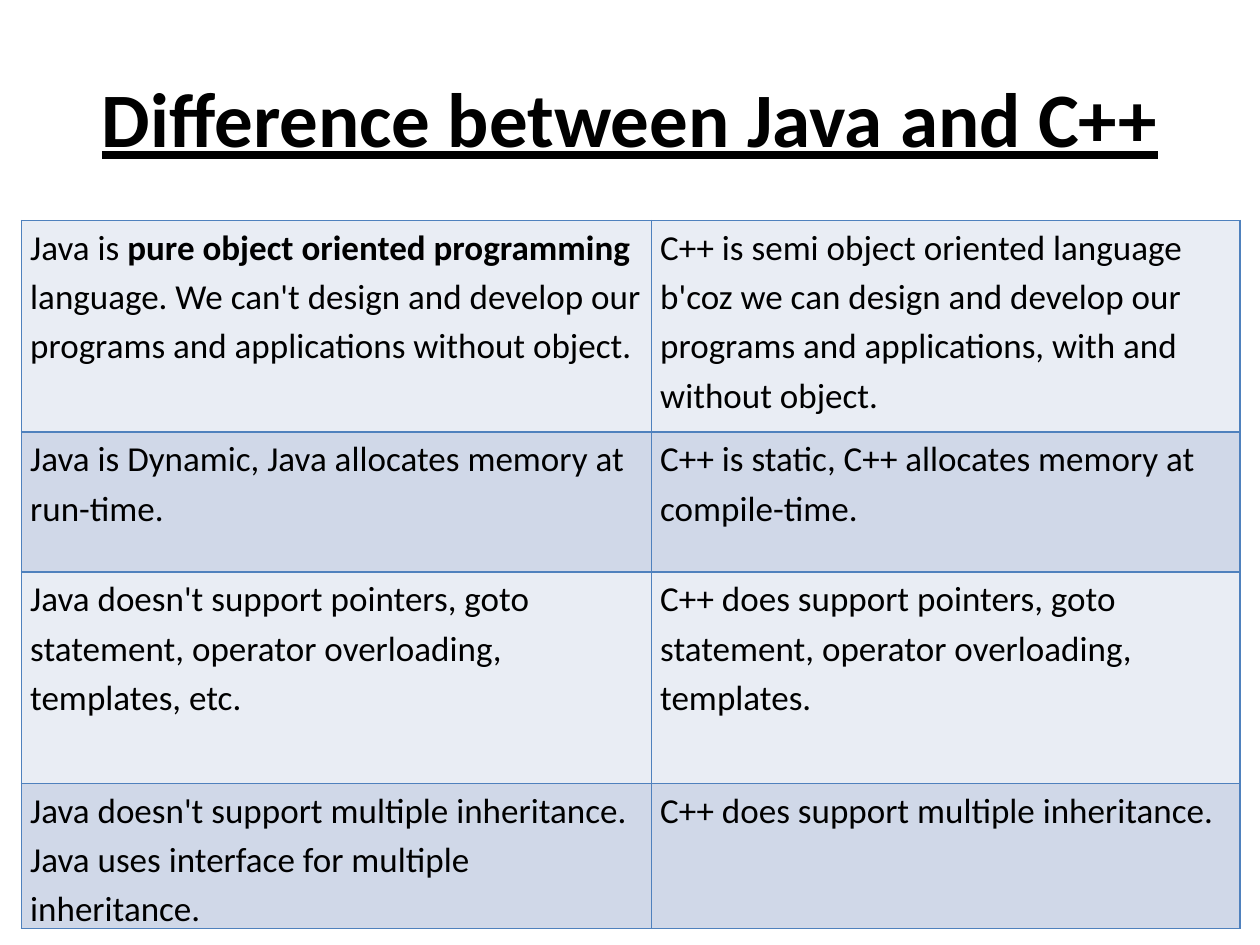
from pptx import Presentation
from pptx.dml.color import RGBColor
from pptx.enum.text import MSO_ANCHOR as Anchor, PP_ALIGN as Align
from pptx.oxml import parse_xml
from pptx.oxml.ns import nsdecls
from pptx.util import Inches, Pt

FONT = "Calibri"
BLACK = "000000"
BORDER = "4F81BD"
BANDS = ("E9EDF4", "D0D8E8")
COLUMN_WIDTHS = (5, 4.67)
ROW_HEIGHTS = (1.68, 1.11, 1.68, 1.11)
COMPARISON = [
    (
        [
            ("Java is ", False),
            ("pure object oriented programming ", True),
            ("language. We can't design and develop our programs and applications without object.", False),
        ],
        [("C++ is semi object oriented language b'coz we can design and develop our "
          "programs and applications, with and without object.", False)],
    ),
    (
        [("Java is Dynamic, Java allocates memory at run-time.", False)],
        [("C++ is static, C++ allocates memory at compile-time.", False)],
    ),
    (
        [("Java doesn't support pointers, goto statement, operator overloading, templates, etc.", False)],
        [("C++ does support pointers, goto statement, operator overloading, templates.", False)],
    ),
    (
        [("Java doesn't support multiple inheritance. Java uses interface for multiple inheritance.", False)],
        [("C++ does support multiple inheritance.", False)],
    ),
]


def color(value):
    """Turn a hex string into a colour."""
    return RGBColor.from_string(value)


def add_span(para, text, size=20, bold=False, underline=False):
    """Append formatted text to a paragraph."""
    span = para.add_run()
    span.text = text
    span.font.name = FONT
    span.font.size = Pt(size)
    span.font.bold = bold
    span.font.underline = underline
    span.font.color.rgb = color(BLACK)


def add_title(page, text, left, top, width, height):
    """Place the centred, underlined heading."""
    box = page.shapes.add_textbox(Inches(left), Inches(top), Inches(width), Inches(height))
    frame = box.text_frame
    frame.word_wrap = True
    frame.vertical_anchor = Anchor.MIDDLE
    para = frame.paragraphs[0]
    para.alignment = Align.CENTER
    add_span(para, text, size=44, bold=True, underline=True)


def add_borders(cell):
    """Draw a thin line on all four sides of a cell."""
    properties = cell._tc.get_or_add_tcPr()
    for index, side in enumerate(("lnL", "lnR", "lnT", "lnB")):
        line = parse_xml(
            f'<a:{side} {nsdecls("a")} w="{Pt(1)}"><a:solidFill>'
            f'<a:srgbClr val="{BORDER}"/></a:solidFill></a:{side}>'
        )
        properties.insert(index, line)


def fill_cell(cell, spans, band):
    """Write one statement into a filled and bordered cell."""
    cell.margin_left = cell.margin_right = Inches(0.07)
    cell.margin_top = cell.margin_bottom = 0
    cell.fill.solid()
    cell.fill.fore_color.rgb = color(band)
    add_borders(cell)
    para = cell.text_frame.paragraphs[0]
    para.line_spacing = 1.15
    para.space_after = Pt(15)
    for text, bold in spans:
        add_span(para, text, bold=bold)


def add_comparison(page, rows, left, top):
    """Place the two-column comparison table."""
    table = page.shapes.add_table(
        len(rows), len(COLUMN_WIDTHS), Inches(left), Inches(top),
        Inches(sum(COLUMN_WIDTHS)), Inches(sum(ROW_HEIGHTS)),
    ).table
    table.first_row = False
    for column, width in zip(table.columns, COLUMN_WIDTHS):
        column.width = Inches(width)
    for index, (row, height) in enumerate(zip(table.rows, ROW_HEIGHTS)):
        row.height = Inches(height)
        for cell, spans in zip(row.cells, rows[index]):
            fill_cell(cell, spans, BANDS[index % len(BANDS)])


def main():
    """Build the deck and save it."""
    deck = Presentation()
    deck.slide_width, deck.slide_height = Inches(10), Inches(7.5)
    page = deck.slides.add_slide(deck.slide_layouts[6])
    add_title(page, "Difference between Java and C++", 0.5, 0.3, 9, 1.25)
    add_comparison(page, COMPARISON, 0.17, 1.75)
    deck.save("out.pptx")


if __name__ == "__main__":
    main()
